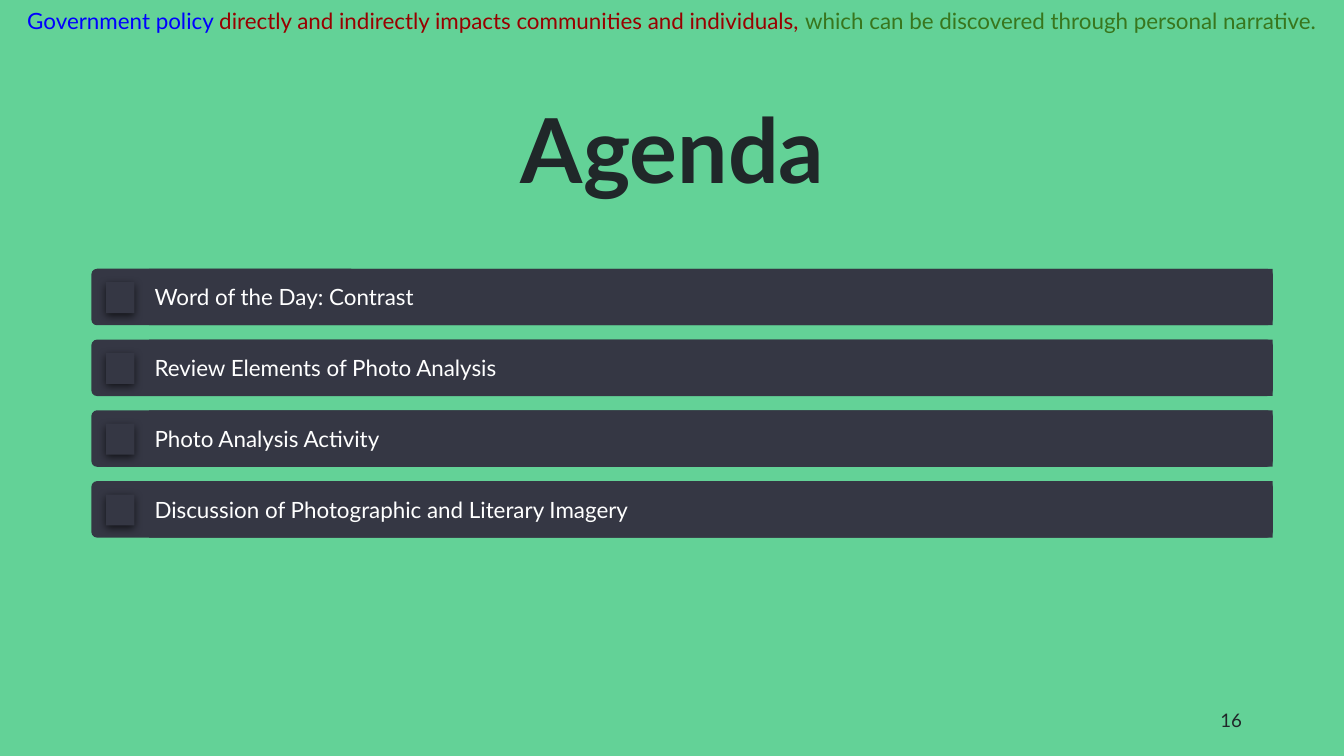
from pptx import Presentation
from pptx.dml.color import RGBColor
from pptx.enum.shapes import MSO_SHAPE
from pptx.enum.text import MSO_ANCHOR, PP_ALIGN
from pptx.oxml import parse_xml
from pptx.oxml.ns import nsdecls
from pptx.util import Inches, Pt

GREEN, SLATE, INK = "63D297", "353744", "202729"


def add_box(shapes, kind, x, y, w, h, color):
    sp = shapes.add_shape(kind, Inches(x), Inches(y), Inches(w), Inches(h))
    sp.shadow.inherit = False
    sp.fill.solid()
    sp.fill.fore_color.rgb = RGBColor.from_string(color)
    sp.line.fill.background()
    return sp


def write(sp, runs, size, align, inset, anchor=MSO_ANCHOR.MIDDLE, bold=False):
    tf = sp.text_frame
    tf.word_wrap = True
    tf.vertical_anchor = anchor
    tf.margin_left = tf.margin_right = Inches(inset[0])
    tf.margin_top = tf.margin_bottom = Inches(inset[1])
    p = tf.paragraphs[0]
    p.alignment = align
    for text, color in runs:
        r = p.add_run()
        r.text = text
        r.font.name = "Lato"
        r.font.size = Pt(size)
        r.font.bold = bold
        r.font.color.rgb = RGBColor.from_string(color)
    return p


prs = Presentation()
prs.slide_width = Inches(10)
prs.slide_height = Inches(10 * 9 / 16)
s = prs.slides.add_slide(prs.slide_layouts[5])

backdrop = add_box(s.shapes, MSO_SHAPE.RECTANGLE, 0, 0, 10, 10 * 9 / 16, GREEN)
title = s.shapes.title
backdrop.element.addnext(title.element)
title.left, title.top = Inches(1.77), Inches(0.74)
title.width, title.height = Inches(6.47), Inches(0.82)
p = write(title, [("Agenda", INK)], 48, PP_ALIGN.CENTER, (0.07, 0.04), bold=True)
p.line_spacing = 0.9

items = [
    "Word of the Day: Contrast",
    "Review Elements of Photo Analysis",
    "Photo Analysis Activity",
    "Discussion of Photographic and Literary Imagery",
]
first_y, last_y = 2, 3.58
pitch = (last_y - first_y) / (len(items) - 1)
agenda = s.shapes.add_group_shape()
for i, item in enumerate(items):
    y = first_y + i * pitch
    bar = add_box(agenda.shapes, MSO_SHAPE.ROUNDED_RECTANGLE, 0.68, y, 8.79, 0.42, SLATE)
    bar.adjustments[0] = 0.1

    marker = add_box(agenda.shapes, MSO_SHAPE.RECTANGLE, 0.79, y + 0.1, 0.21, 0.23, SLATE)
    effects = marker.element.spPr.find("{*}effectLst")
    effects.append(parse_xml(
        f'<a:outerShdw {nsdecls("a")} blurRad="{Pt(4.5)}" dist="{Pt(1.5)}" dir="5400000"'
        ' algn="ctr" rotWithShape="0"><a:srgbClr val="000000"><a:alpha val="63000"/>'
        '</a:srgbClr></a:outerShdw>'))

    label = add_box(agenda.shapes, MSO_SHAPE.RECTANGLE, 1.11, y, 8.36, 0.42, SLATE)
    write(label, [(item, "FFFFFF")], 12, PP_ALIGN.LEFT, (0.04, 0.04))

theme = s.shapes.add_textbox(Inches(0), Inches(-0.03), Inches(10), Inches(0.32))
p = write(theme, [
    ("Government policy ", "0000FF"),
    ("directly and indirectly impacts communities and individuals, ", "980000"),
    ("which can be discovered through personal narrative.", "38761D"),
], 12, PP_ALIGN.CENTER, (0.1, 0.1), MSO_ANCHOR.TOP)
p.line_spacing = 0.95

number = s.shapes.add_textbox(Inches(7.06), Inches(5.21), Inches(2.25), Inches(0.3))
write(number, [("16", INK)], 10, PP_ALIGN.RIGHT, (0.07, 0.04))

prs.save("out.pptx")
